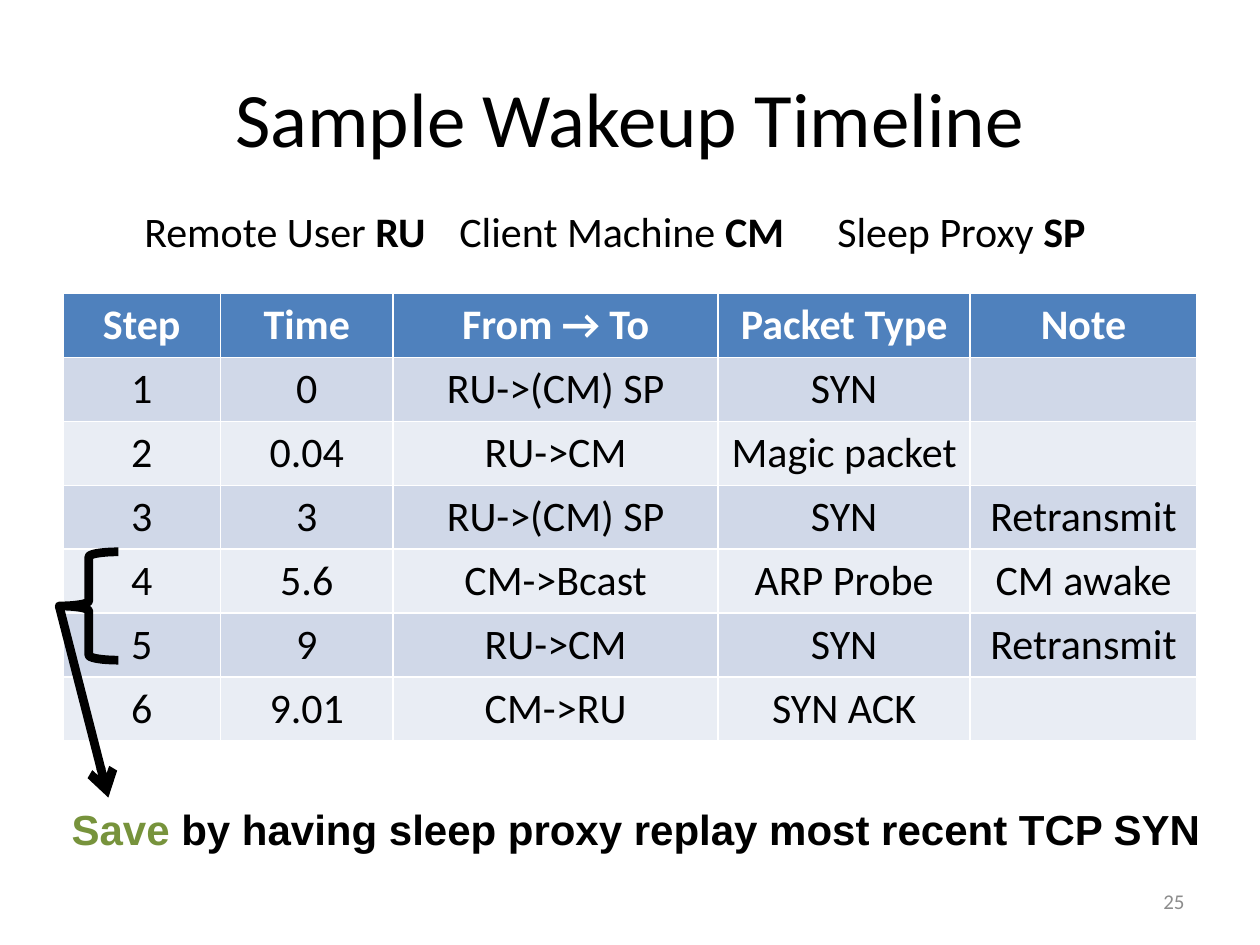
"""Build the sample wakeup timeline slide."""
from lxml.etree import SubElement
from pptx import Presentation
from pptx.dml.color import RGBColor
from pptx.enum.shapes import MSO_CONNECTOR, MSO_SHAPE
from pptx.enum.text import MSO_ANCHOR as ANCHOR, PP_ALIGN as ALIGN
from pptx.oxml.ns import qn
from pptx.util import Inches, Pt

BLACK = RGBColor(0x00, 0x00, 0x00)
WHITE = RGBColor(0xFF, 0xFF, 0xFF)
GRAY = RGBColor(0x8C, 0x8C, 0x8C)
GREEN = RGBColor(0x77, 0x93, 0x3C)
HEADER_BLUE = RGBColor(0x4F, 0x81, 0xBD)
BAND_DARK = RGBColor(0xD0, 0xD8, 0xE8)
BAND_LIGHT = RGBColor(0xE9, 0xED, 0xF4)


def write(frame, text, size=24, font="Calibri", color=BLACK, bold=False,
          align=ALIGN.CENTER, anchor=ANCHOR.TOP):
    frame.word_wrap = True
    frame.vertical_anchor = anchor
    paragraph = frame.paragraphs[0]
    paragraph.alignment = align
    run = paragraph.add_run()
    run.text = text
    run.font.size = Pt(size)
    run.font.name = font
    run.font.color.rgb = color
    run.font.bold = bold


prs = Presentation()
prs.slide_width, prs.slide_height = Inches(10), Inches(7.5)
slide = prs.slides.add_slide(prs.slide_layouts[5])
shapes = slide.shapes

title = shapes.title
title.left, title.top = Inches(0.5), Inches(0.3)
title.width, title.height = Inches(9), Inches(1.25)
write(title.text_frame, "Sample Wakeup Timeline", size=44, anchor=ANCHOR.MIDDLE)

steps = [
    ("Step", "Time", "From → To", "Packet Type", "Note"),
    ("1", "0", "RU->(CM) SP", "SYN", ""),
    ("2", "0.04", "RU->CM", "Magic packet", ""),
    ("3", "3", "RU->(CM) SP", "SYN", "Retransmit"),
    ("4", "5.6", "CM->Bcast", "ARP Probe", "CM awake"),
    ("5", "9", "RU->CM", "SYN", "Retransmit"),
    ("6", "9.01", "CM->RU", "SYN ACK", ""),
]
column_widths = [1.25, 1.37, 2.58, 2, 1.8]
timeline = shapes.add_table(len(steps), len(column_widths), Inches(0.5), Inches(2.33),
                            Inches(9), Inches(3.5)).table
for column, width in zip(timeline.columns, column_widths):
    column.width = Inches(width)
for row, step in enumerate(steps):
    is_header = row == 0
    band = HEADER_BLUE if is_header else BAND_DARK if row % 2 else BAND_LIGHT
    for col, entry in enumerate(step):
        cell = timeline.cell(row, col)
        cell.fill.solid()
        cell.fill.fore_color.rgb = band
        cell.vertical_anchor = ANCHOR.MIDDLE
        write(cell.text_frame, entry, color=WHITE if is_header else BLACK,
              bold=is_header, anchor=ANCHOR.MIDDLE)

legend = shapes.add_textbox(Inches(0.17), Inches(1.58), Inches(9.42), Inches(0.5))
for role, abbreviation in [("Remote User ", "RU\t"), ("Client Machine ", "CM \t"),
                           ("Sleep Proxy ", "SP")]:
    write(legend.text_frame, role)
    write(legend.text_frame, abbreviation, bold=True)

page_number = shapes.add_textbox(Inches(7.17), Inches(6.95), Inches(2.33), Inches(0.4))
write(page_number.text_frame, "25", size=12, color=GRAY, align=ALIGN.RIGHT,
      anchor=ANCHOR.MIDDLE)

brace = shapes.add_shape(MSO_SHAPE.LEFT_BRACE, Inches(0.47), Inches(4.38),
                         Inches(0.47), Inches(0.86))
brace.shadow.inherit = False
brace.fill.background()

arrow = shapes.add_connector(MSO_CONNECTOR.STRAIGHT, Inches(0.47), Inches(4.81),
                             Inches(0.86), Inches(6.33))
arrow.begin_connect(brace, 1)
for mark in (brace, arrow):
    mark.line.color.rgb = BLACK
    mark.line.width = Pt(5)
SubElement(arrow.line._get_or_add_ln(), qn("a:tailEnd"), type="arrow")
SubElement(arrow._element.spPr, qn("a:effectLst"))

saving = shapes.add_textbox(Inches(0.47), Inches(6.33), Inches(9.38), Inches(0.5))
for phrase, color in [("Save", GREEN),
                      (" by having sleep proxy replay most recent TCP SYN", BLACK)]:
    write(saving.text_frame, phrase, font="Arial", color=color, bold=True,
          align=ALIGN.LEFT)

prs.save("out.pptx")
